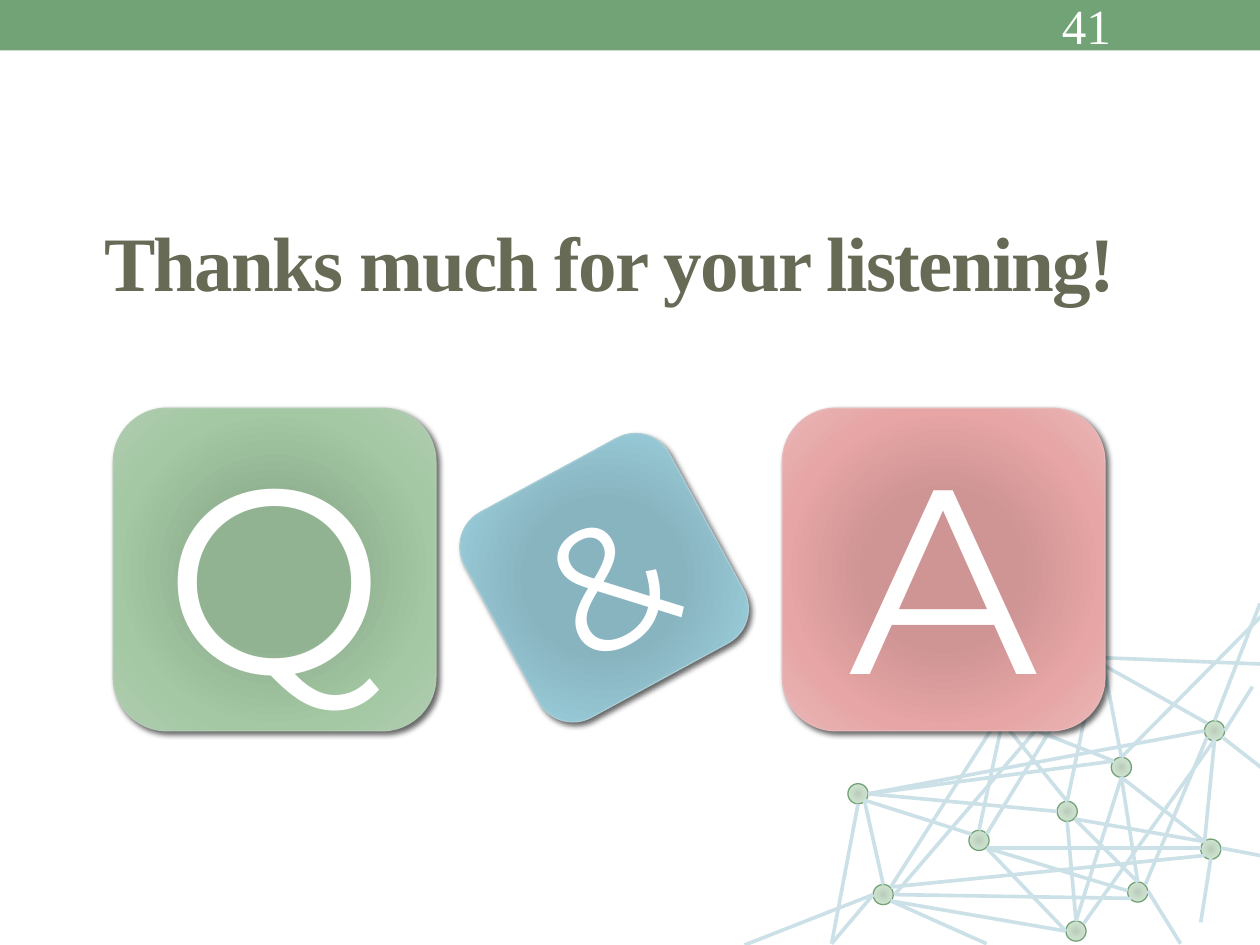
from dataclasses import dataclass

from pptx import Presentation
from pptx import util as u
from pptx.dml.color import RGBColor
from pptx.enum import shapes, text
from pptx.oxml import parse_xml
from pptx.oxml.ns import nsdecls, qn

COLORS = {
    "band": "72A376",
    "link": "CBE1E7",
    "title": "676A55",
    "white": "FFFFFF",
    "shadow": "000000",
}
SERIF = "Times New Roman"
SANS = "Montserrat"
NODE_SIZE = 0.16
NODE_STOPS = ((0, "BACCBB"), (45, "C8DDC9"), (100, "E1ECE1"))


@dataclass
class Tile:
    label: str
    x: float
    y: float
    side: float
    size: int
    shades: tuple
    rotation: float = 0


TILES = [
    Tile("Q", 0.9, 3.24, 2.56, 150, ("91B591", "92B392", "A3C8A3", "B0CCB0")),
    Tile("A", 6.21, 3.24, 2.56, 150, ("D19292", "CF9494", "E7A5A5", "E8B7B7")),
    Tile("&", 3.87, 3.66, 1.85, 100, ("86B5C2", "88B4C0", "97C9D6", "A8CDD7"), 331.5),
]

NODES = [
    (7.86, 5.64), (8.6, 5.2), (6.73, 6.22), (8.82, 6.01), (9.56, 5.72), (7.69, 6.59),
    (8.39, 6.36), (6.93, 7.02), (9.53, 6.66), (8.95, 7), (8.46, 7.31),
]

LINKS = {
    (8.76, 5.28): [(9.58, 5.74), (8.9, 6.01)],
    (8.68, 5.36): [(8.47, 6.36)],
    (8.62, 5.33): [(7.83, 6.62), (7.1, 7.1)],
    (7.88, 5.77): [(7.07, 7.04)],
    (8.02, 5.72): [(8.84, 6.04)],
    (7.99, 5.77): [(8.47, 6.36)],
    (7.94, 5.8): [(7.77, 6.59)],
    (6.86, 6.35): [(7.01, 7.02), (7.71, 6.62)],
    (6.89, 6.3): [(8.39, 6.44), (8.84, 6.04), (9.56, 5.8)],
    (7.1, 7.1): [(8.98, 7.13)],
    (7.83, 6.73): [(8.95, 7.07), (9.53, 6.73), (8.46, 7.39)],
    (8.53, 6.5): [(9.03, 7), (9.56, 6.68)],
    (8.9, 6.17): [(9.03, 7), (9.56, 6.68), (8.54, 7.31)],
    (9.58, 5.85): [(9.09, 7.02)],
    (7.07, 7.04): [(9.56, 6.79)],
    (9.64, 5.87): [(9.56, 6.68), (8.6, 7.33)],
    (9.7, 5.85): [(10.11, 6.17)],
    (9.69, 6.73): [(10.26, 6.84)],
    (9.61, 6.81): [(9.53, 7.32)],
    (9.11, 7.07): [(9.37, 7.49)],
    (7.07, 7.15): [(7.83, 7.49), (8.46, 7.39)],
    (6.81, 6.38): [(6.6, 7.49)],
    (6.93, 7.1): [(6.6, 7.49), (5.91, 7.5)],
    (8.74, 5.22): [(10.26, 5.28)],
    (9.72, 5.8): [(9.94, 5.45)],
    (9.64, 5.72): [(10, 4.79)],
    (8.47, 6.52): [(8.54, 7.31)],
    (10.11, 4.79): [(8.9, 6.01)],
}


def rgb(value: str) -> RGBColor:
    return RGBColor.from_string(value)


def box(x: float, y: float, w: float, h: float) -> tuple:
    return tuple(u.Inches(v) for v in (x, y, w, h))


def write(tf, content: str, *, size: float, font: str, color: str, bold=False, align=None, spacing=None):
    tf.word_wrap = True
    tf.auto_size = text.MSO_AUTO_SIZE.NONE
    tf.vertical_anchor = text.MSO_ANCHOR.MIDDLE
    p = tf.paragraphs[0]
    p.alignment = align
    r = p.add_run()
    r.text = content
    r.font.size, r.font.name, r.font.bold = u.Pt(size), font, bold
    r.font.color.rgb = rgb(color)
    if spacing is not None:
        r.font._element.set("spc", str(spacing * 100))


def radial_fill(sp, stops: tuple) -> None:
    sp.fill.gradient()
    old = sp._element.spPr.find(qn("a:gradFill"))
    gs = "".join(
        f'<a:gs pos="{pos * 1000}"><a:srgbClr val="{color}"/></a:gs>' for pos, color in stops
    )
    new = parse_xml(
        f'<a:gradFill {nsdecls("a")} rotWithShape="1"><a:gsLst>{gs}</a:gsLst><a:path path="circle">'
        '<a:fillToRect l="100000" t="100000" r="100000" b="100000"/></a:path></a:gradFill>'
    )
    old.getparent().replace(old, new)


def add_radial(s, kind, bounds: tuple, stops: tuple, line: str):
    sp = s.shapes.add_shape(kind, *box(*bounds))
    radial_fill(sp, stops)
    sp.line.color.rgb = rgb(line)
    sp.line.width = u.Pt(0.75)
    sp.shadow.inherit = False
    return sp


def add_link(s, start: tuple, end: tuple) -> None:
    sp = s.shapes.add_connector(
        shapes.MSO_CONNECTOR.STRAIGHT, *(u.Inches(v) for v in (*start, *end))
    )
    sp.line.color.rgb = rgb(COLORS["link"])
    sp.line.width = u.Pt(2.08)
    sp._element.spPr.append(parse_xml(f'<a:effectLst {nsdecls("a")}/>'))


def add_tile(s, tile: Tile) -> None:
    sp = add_radial(
        s, shapes.MSO_SHAPE.ROUNDED_RECTANGLE, (tile.x, tile.y, tile.side, tile.side),
        tuple(zip((0, 34, 70, 100), tile.shades)), tile.shades[-1],
    )
    sp.rotation = tile.rotation
    sp._element.spPr.find(qn("a:effectLst")).append(parse_xml(
        f'<a:outerShdw {nsdecls("a")} blurRad="{u.Pt(3)}" dist="{u.Pt(2)}" dir="2700000" '
        f'algn="tl" rotWithShape="0"><a:srgbClr val="{COLORS["shadow"]}">'
        '<a:alpha val="60000"/></a:srgbClr></a:outerShdw>'
    ))
    write(sp.text_frame, tile.label, size=tile.size, font=SANS, color=COLORS["white"],
          align=text.PP_ALIGN.CENTER)


def main() -> None:
    prs = Presentation()
    prs.slide_width, prs.slide_height = u.Inches(10), u.Inches(7.5)
    s = prs.slides.add_slide(prs.slide_layouts[5])

    band = s.shapes.add_shape(shapes.MSO_SHAPE.RECTANGLE, *box(0, 0, 10, 0.4))
    band.fill.solid()
    band.fill.fore_color.rgb = rgb(COLORS["band"])
    band.line.fill.background()
    band.shadow.inherit = False

    for x, y in NODES:
        add_radial(s, shapes.MSO_SHAPE.OVAL, (x, y, NODE_SIZE, NODE_SIZE), NODE_STOPS, COLORS["band"])
    for start, ends in LINKS.items():
        for end in ends:
            add_link(s, start, end)

    number = s.shapes.add_textbox(*box(8.33, 0.02, 1.17, 0.36))
    write(number.text_frame, "41", size=28, font=SERIF, color=COLORS["white"])

    for tile in TILES:
        add_tile(s, tile)

    title = s.shapes.title
    title.left, title.top, title.width, title.height = box(0.34, 1.53, 9, 1.08)
    write(title.text_frame, "Thanks much for your listening!", size=44, font=SERIF,
          color=COLORS["title"], bold=True, align=text.PP_ALIGN.CENTER, spacing=-1)

    prs.save("out.pptx")


if __name__ == "__main__":
    main()
